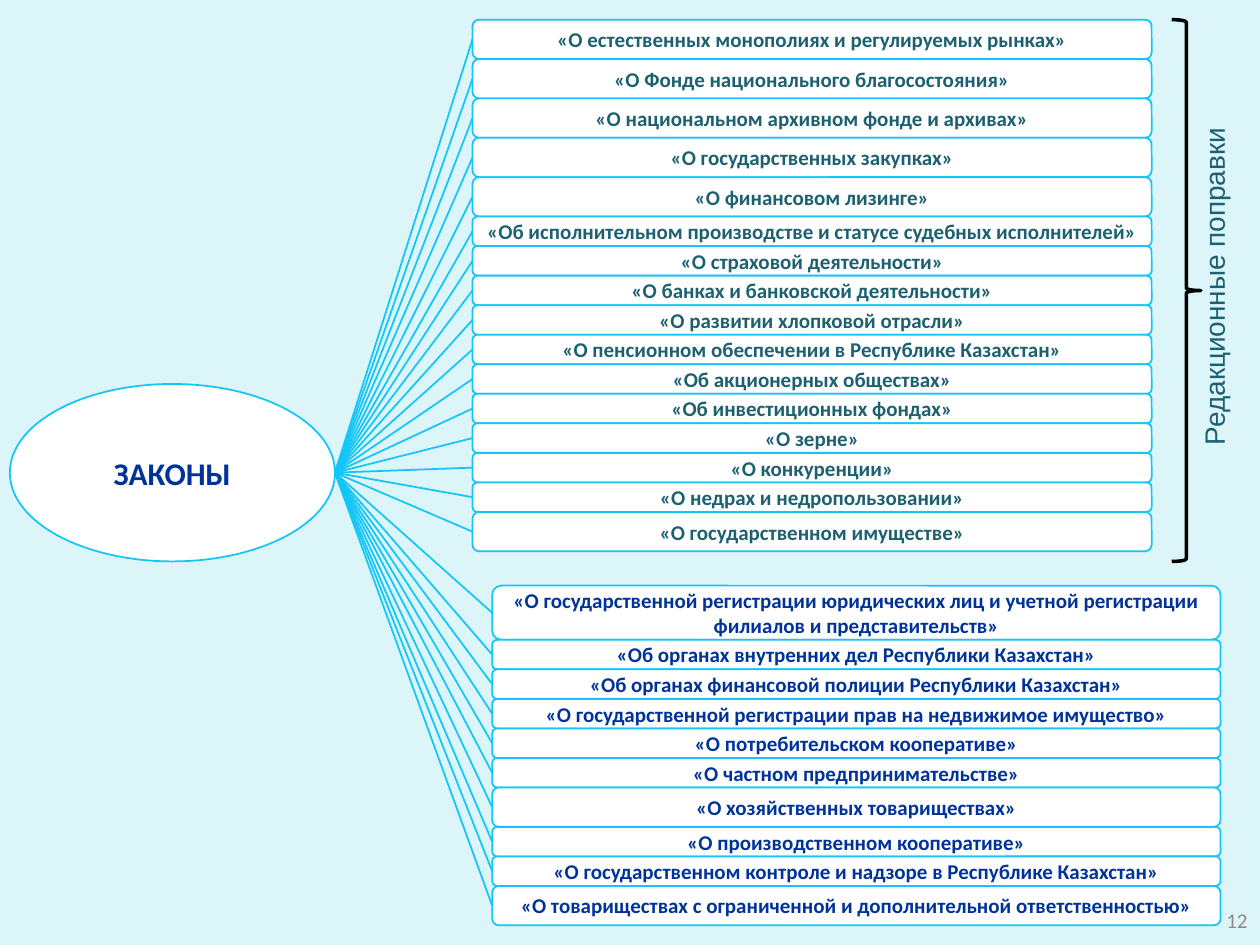
from lxml import etree
from pptx import Presentation
from pptx.dml.color import RGBColor
from pptx.enum import shapes, text
from pptx.oxml import ns
from pptx.util import Pt

BACKGROUND = RGBColor(0xDB, 0xF5, 0xF9)
WHITE = RGBColor(0xFF, 0xFF, 0xFF)
CYAN = RGBColor(0x14, 0xC5, 0xF7)
TEAL = RGBColor(0x1D, 0x61, 0x71)
NAVY = RGBColor(0x00, 0x33, 0x99)
GREY = RGBColor(0x8C, 0x8C, 0x8C)
BLACK = RGBColor(0, 0, 0)

SHORT, TALL, DOUBLE = 16.88, 22.5, 30.9

EDITORIAL_LAWS = [
    ("«О естественных монополиях и регулируемых рынках»", TALL),
    ("«О Фонде национального благосостояния»", TALL),
    ("«О национальном архивном фонде и архивах»", TALL),
    ("«О государственных закупках»", TALL),
    ("«О финансовом лизинге»", TALL),
    ("«Об исполнительном производстве и статусе судебных исполнителей»", SHORT),
    ("«О страховой деятельности»", SHORT),
    ("«О банках и банковской деятельности»", SHORT),
    ("«О развитии хлопковой отрасли»", SHORT),
    ("«О пенсионном обеспечении в Республике Казахстан»", SHORT),
    ("«Об акционерных обществах»", SHORT),
    ("«Об инвестиционных фондах»", SHORT),
    ("«О зерне»", SHORT),
    ("«О конкуренции»", SHORT),
    ("«О недрах и недропользовании»", SHORT),
    ("«О государственном имуществе»", TALL),
]
OTHER_LAWS = [
    ("«О государственной регистрации юридических лиц и учетной регистрации "
     "филиалов и представительств»", DOUBLE),
    ("«Об органах внутренних дел Республики Казахстан»", SHORT),
    ("«Об органах финансовой полиции Республики Казахстан»", SHORT),
    ("«О государственной регистрации прав на недвижимое имущество»", SHORT),
    ("«О потребительском кооперативе»", SHORT),
    ("«О частном предпринимательстве»", SHORT),
    ("«О хозяйственных товариществах»", TALL),
    ("«О производственном кооперативе»", SHORT),
    ("«О государственном контроле и надзоре в Республике Казахстан»", SHORT),
    ("«О товариществах с ограниченной и дополнительной ответственностью»", TALL),
]


def format_paragraph(p, size, color, align, name="Calibri", bold=False):
    p.alignment = align
    p.font.size = Pt(size)
    p.font.name = name
    p.font.bold = bold
    p.font.color.rgb = color


def add_node(slide, kind, box, label, size, color):
    """Add a white shape with a cyan outline and a centred bold label."""
    sp = slide.shapes.add_shape(kind, *map(Pt, box))
    sp.shadow.inherit = False
    sp.fill.solid()
    sp.fill.fore_color.rgb = WHITE
    sp.line.color.rgb = CYAN
    sp.line.width = Pt(1)
    tf = sp.text_frame
    tf.word_wrap = True
    tf.vertical_anchor = text.MSO_ANCHOR.MIDDLE
    p = tf.paragraphs[0]
    p.text = label
    format_paragraph(p, size, color, text.PP_ALIGN.CENTER, bold=True)
    return sp


def add_ray(slide, hub, row):
    """Join the right end of the hub to the left side of a row."""
    x, y = hub.left + hub.width, hub.top + hub.height // 2
    line = slide.shapes.add_connector(shapes.MSO_CONNECTOR.STRAIGHT, x, y, x, y)
    line.end_connect(row, 1)
    line.line.color.rgb = CYAN
    line.line.width = Pt(1)
    etree.SubElement(line._element.spPr, ns.qn("a:effectLst"))


def add_law_stack(slide, hub, left, top, width, laws, color):
    """Stack the laws without gaps and link each one to the hub."""
    for law, height in laws:
        row = add_node(slide, shapes.MSO_SHAPE.ROUNDED_RECTANGLE,
                       (left, top, width, height), law, 12, color)
        add_ray(slide, hub, row)
        top += height


def add_brace_note(slide, left, top, height, note):
    """Add a right brace with a note that reads upwards beside it."""
    brace = slide.shapes.add_shape(shapes.MSO_SHAPE.RIGHT_BRACE, Pt(left), Pt(top),
                                   Pt(16.6), Pt(height))
    brace.shadow.inherit = False
    brace.fill.background()
    brace.line.color.rgb = BLACK
    brace.line.width = Pt(2)

    note_height = 190.8
    box = slide.shapes.add_textbox(Pt(left + 10.8), Pt(top + (height - note_height) / 2),
                                   Pt(33.8), Pt(note_height))
    tf = box.text_frame
    tf.word_wrap = False
    tf.auto_size = text.MSO_AUTO_SIZE.SHAPE_TO_FIT_TEXT
    tf._txBody.bodyPr.set("vert", "vert270")
    p = tf.paragraphs[0]
    p.text = note
    format_paragraph(p, 16, TEAL, text.PP_ALIGN.LEFT, name="Arial")


def add_page_number(slide, left, top, width, height, number):
    box = slide.shapes.add_textbox(Pt(left), Pt(top), Pt(width), Pt(height))
    tf = box.text_frame
    tf.word_wrap = True
    tf.vertical_anchor = text.MSO_ANCHOR.MIDDLE
    p = tf.paragraphs[0]
    p.text = number
    format_paragraph(p, 12, GREY, text.PP_ALIGN.RIGHT)


def main():
    prs = Presentation()
    prs.slide_width, prs.slide_height = Pt(720), Pt(540)
    slide = prs.slides.add_slide(prs.slide_layouts[6])
    slide.background.fill.solid()
    slide.background.fill.fore_color.rgb = BACKGROUND

    hub = add_node(slide, shapes.MSO_SHAPE.OVAL, (5.6, 219.4, 185.8, 101.4),
                   "ЗАКОНЫ", 18, NAVY)
    add_law_stack(slide, hub, 270, 11.25, 388.1, EDITORIAL_LAWS, TEAL)
    add_law_stack(slide, hub, 281.25, 334.7, 416.2, OTHER_LAWS, NAVY)
    add_brace_note(slide, 669.6, 11.25, 309.6, "Редакционные поправки")
    add_page_number(slide, 552, 511.5, 168, 28.5, "12")
    prs.save("out.pptx")


if __name__ == "__main__":
    main()
